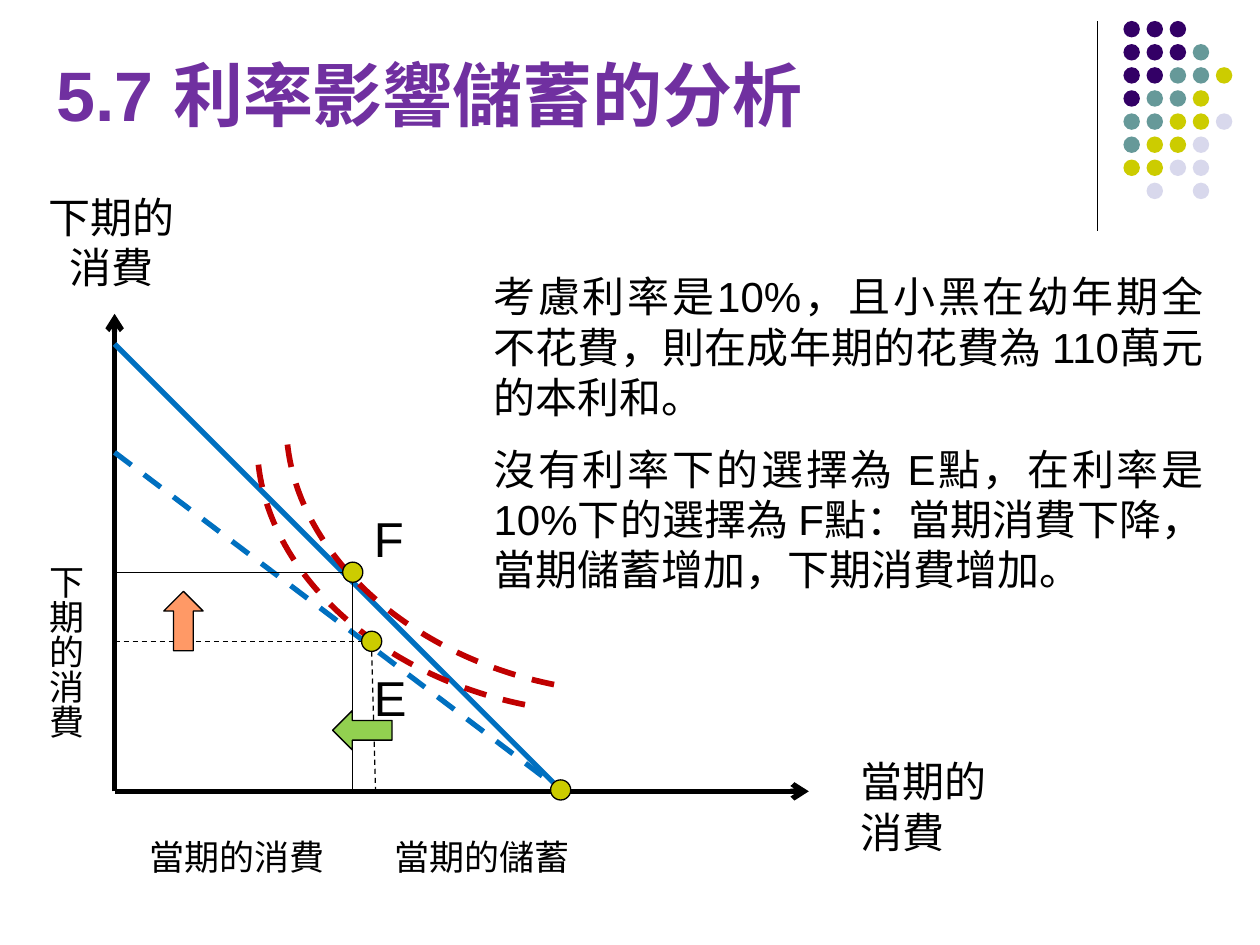
from dataclasses import dataclass
from typing import Optional

from lxml import etree
from pptx import Presentation, util as u
from pptx.dml.color import RGBColor
from pptx.enum import dml, shapes, text
from pptx.oxml.ns import qn

Pt = u.Pt
BLACK, BLUE, RED, LIME = "000000", "0070C0", "C00000", "CCCC00"
CJK = "Noto Sans CJK TC"

# Points of the diagram
ORIGIN = (65.5, 452.2)
E, F, ALL_NOW = (212.4, 366.5), (201.6, 327), (320.4, 451.4)
RADIUS = 5.75


@dataclass
class Line:
    start: tuple
    end: tuple
    color: str = BLACK
    width: float = 0.75
    dashed: bool = False
    arrow: bool = False


@dataclass
class Shape:
    kind: shapes.MSO_SHAPE
    box: tuple
    fill: Optional[str] = None
    line: Optional[str] = BLACK
    width: float = 0.75
    rotation: float = 0
    dashed: bool = False
    adjustments: tuple = ()


@dataclass
class Label:
    box: tuple
    paragraphs: tuple
    size: float
    font: str = CJK
    color: str = BLACK
    bold: bool = False
    align: text.PP_ALIGN = text.PP_ALIGN.LEFT
    wrap: bool = False
    vertical: bool = False
    gap: float = 0
    leading: Optional[float] = 1.2


def rgb(value: str) -> RGBColor:
    return RGBColor.from_string(value)


def style_line(line, item) -> None:
    line.color.rgb = rgb(item.color if isinstance(item, Line) else item.line)
    line.width = Pt(item.width)
    if item.dashed:
        line.dash_style = dml.MSO_LINE.DASH


def draw_line(s, item: Line) -> None:
    c = s.shapes.add_connector(shapes.MSO_CONNECTOR.STRAIGHT,
                               *map(Pt, item.start + item.end))
    style_line(c.line, item)
    if item.arrow:
        etree.SubElement(c.line._get_or_add_ln(), qn("a:tailEnd"), type="arrow")
    etree.SubElement(c._element.spPr, qn("a:effectLst"))


def draw_shape(s, item: Shape) -> None:
    sp = s.shapes.add_shape(item.kind, *map(Pt, item.box))
    sp.shadow.inherit = False
    sp.rotation = item.rotation
    for i, value in enumerate(item.adjustments):
        sp.adjustments[i] = value
    if item.fill:
        sp.fill.solid()
        sp.fill.fore_color.rgb = rgb(item.fill)
    else:
        sp.fill.background()
    if item.line:
        style_line(sp.line, item)
    else:
        sp.line.fill.background()


def draw_label(s, item: Label) -> None:
    sp = s.shapes.add_textbox(*map(Pt, item.box))
    tf = sp.text_frame
    tf.word_wrap = item.wrap
    if item.vertical:
        tf._txBody.bodyPr.set("vert", "eaVert")
    for i, words in enumerate(item.paragraphs):
        p = tf.add_paragraph() if i else tf.paragraphs[0]
        p.alignment = item.align
        p.space_before = p.space_after = Pt(item.gap)
        if item.leading:
            p.line_spacing = Pt(item.size * item.leading)
        r = p.add_run()
        r.text = words
        r.font.size = Pt(item.size)
        r.font.bold = item.bold
        r.font.name = item.font
        r.font.color.rgb = rgb(item.color)
        etree.SubElement(r._r.get_or_add_rPr(), qn("a:ea"), typeface=CJK)


def point(center: tuple) -> Shape:
    x, y = center
    return Shape(shapes.MSO_SHAPE.OVAL,
                 (x - RADIUS, y - RADIUS, 2 * RADIUS, 2 * RADIUS), LIME)


def curve(left: float, top: float) -> Shape:
    return Shape(shapes.MSO_SHAPE.ARC, (left, top, 362.9, 272.2), line=RED,
                 width=3.25, rotation=191.4, dashed=True,
                 adjustments=(162, 211.15))


def draw_dot_grid(s) -> None:
    colors = {"P": "330066", "T": "669999", "Y": LIME, "L": "D8D8EC"}
    rows = ("PPP", "PPPT", "PPTTY", "PTTY", "TTYYL", "TYYL", "YYLL", " L L")
    pitch, size = 13.2, 9.4
    for j, row in enumerate(rows):
        for i, key in enumerate(row):
            if key in colors:
                box = (642 + i * pitch, 12 + j * pitch, size, size)
                draw_shape(s, Shape(shapes.MSO_SHAPE.OVAL, box, colors[key], None))


LINES = (
    # Axes
    Line(ORIGIN, (462.2, ORIGIN[1]), width=3, arrow=True),
    Line(ORIGIN, (ORIGIN[0], 179.3), width=3, arrow=True),
    # Budget lines without and with interest
    Line((ORIGIN[0], 258.5), ALL_NOW, BLUE, 3, dashed=True),
    Line((ORIGIN[0], 196.6), (316.1, 447.1), BLUE, 3),
    # Guides from E and F to the axes
    Line((ORIGIN[0], E[1]), E, dashed=True),
    Line((E[0], E[1] + RADIUS), (214.6, ORIGIN[1]), dashed=True),
    Line((ORIGIN[0], F[1]), F),
    Line(F, (F[0], ORIGIN[1])),
)

SHAPES = (
    # Indifference curves
    curve(145.4, 133.2), curve(162, 121.7),
    point(ALL_NOW), point(E), point(F),
    # Directions of change
    Shape(shapes.MSO_SHAPE.UP_ARROW, (93.6, 337.9, 22.5, 34), "FF9966"),
    Shape(shapes.MSO_SHAPE.UP_ARROW, (195.8, 400.3, 22.5, 34), "92D050",
          rotation=270),
)

CENTER = text.PP_ALIGN.CENTER
LABELS = (
    Label((25.2, 25.9, 583.9, 67.7), ("5.7 利率影響儲蓄的分析",), 40, "Arial",
          "7030A0", bold=True, wrap=True),
    Label((275, 151.2, 419.8, 235.4), (
        "考慮利率是10%，且小黑在幼年期全不花費，則在成年期的花費為 110萬元的本利和。",
        "沒有利率下的選擇為 E點，在利率是 10%下的選擇為 F點：當期消費下降，當期儲蓄增加，下期消費增加。",
    ), 24, "Arial", align=text.PP_ALIGN.JUSTIFY, wrap=True, gap=6),
    # Axis titles
    Label((484.6, 428.4, 87.1, 65.5), ("當期的", "消費"), 24),
    Label((20.2, 105.8, 87.1, 65.5), ("下期的", "消費"), 24, align=CENTER),
    # Axis segments
    Label((77.8, 473.8, 115.2, 31.7), ("當期的消費",), 20, align=CENTER),
    Label((218.2, 473.8, 115.2, 31.7), ("當期的儲蓄",), 20),
    Label((14.4, 315.4, 38.9, 108), ("下期的消費",), 20, align=CENTER,
          vertical=True),
    # Names of the choices
    Label((206.6, 378, 26.6, 28.8), ("E",), 28, "Arial", leading=None),
    Label((206.6, 287.3, 25.9, 28.8), ("F",), 28, "Arial", leading=None),
)


def main() -> None:
    prs = Presentation()
    prs.slide_width, prs.slide_height = Pt(720), Pt(540)
    s = prs.slides.add_slide(prs.slide_layouts[6])
    # Corner decoration
    draw_line(s, Line((627.1, 12.2), (627.1, 131.8)))
    draw_dot_grid(s)
    # Diagram and wording
    for item in LINES:
        draw_line(s, item)
    for item in SHAPES:
        draw_shape(s, item)
    for item in LABELS:
        draw_label(s, item)
    prs.save("out.pptx")


if __name__ == "__main__":
    main()
